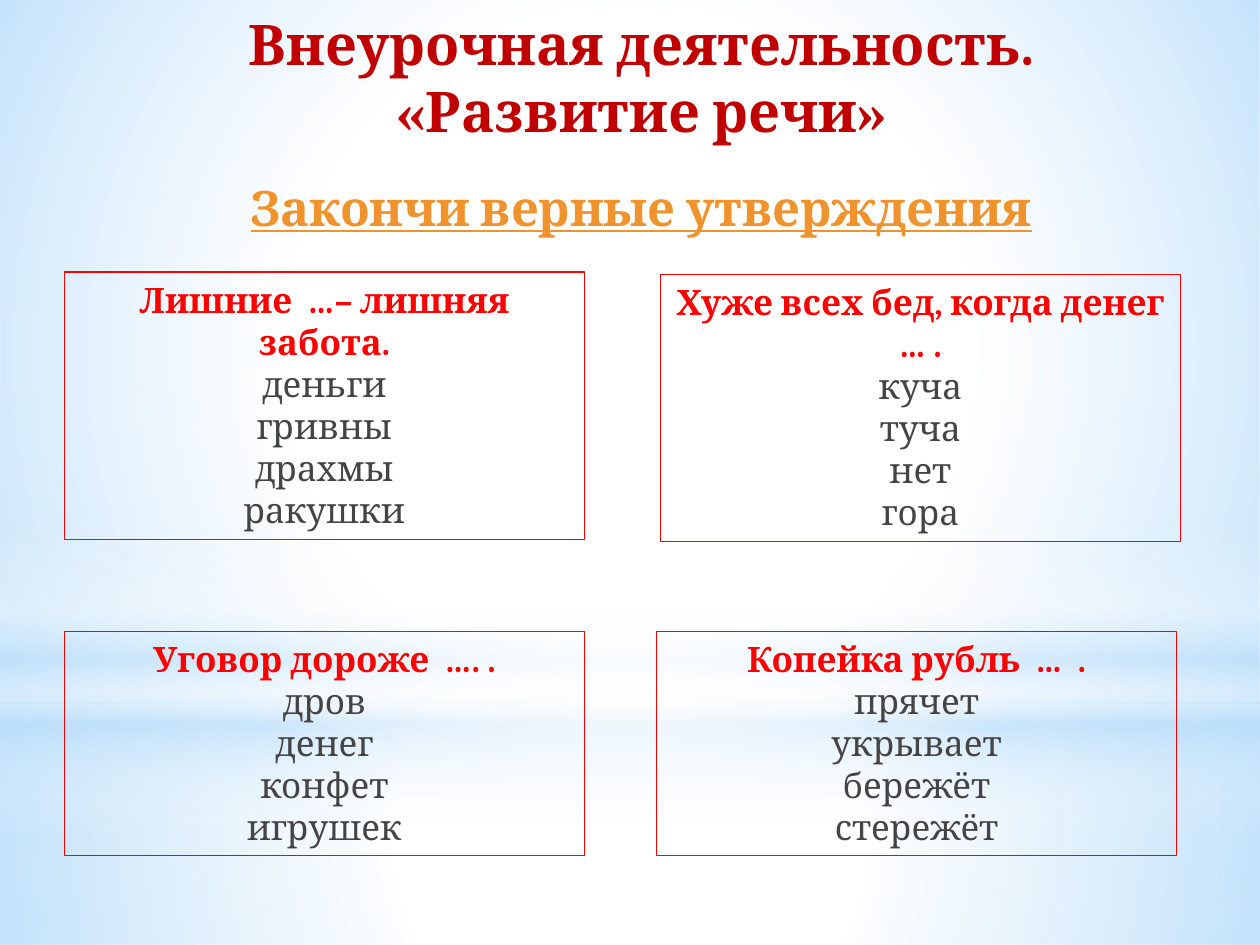
"""Build the speech-development slide with four proverb boxes."""
from lxml.etree import SubElement
from pptx import Presentation
from pptx.dml.color import RGBColor
from pptx.enum.shapes import MSO_SHAPE as Shape
from pptx.enum.text import MSO_ANCHOR as Anchor, MSO_AUTO_SIZE as AutoSize, PP_ALIGN as Align
from pptx.oxml.ns import qn
from pptx.util import Inches, Pt

WHITE = RGBColor(0xFF, 0xFF, 0xFF)
SKY = RGBColor(0xB4, 0xDC, 0xFA)
DARK_RED = RGBColor(0xC0, 0x00, 0x00)
ORANGE = RGBColor(0xF0, 0x93, 0x2C)
RED = RGBColor(0xFF, 0x00, 0x00)
GRAY = RGBColor(0x45, 0x44, 0x45)

presentation = Presentation()
presentation.slide_width = Inches(10)
presentation.slide_height = Inches(7.5)
slide = presentation.slides.add_slide(presentation.slide_layouts[6])
COLUMN = presentation.slide_width / 100
ROW = presentation.slide_height / 75


def place(left, top, width, height):
    return [round(left * COLUMN), round(top * ROW), round(width * COLUMN), round(height * ROW)]


def write_lines(frame, lines, styles):
    frame.word_wrap = True
    for index, (line, style) in enumerate(zip(lines, styles)):
        paragraph = frame.paragraphs[0] if index == 0 else frame.add_paragraph()
        paragraph.alignment = Align.CENTER
        font = paragraph.add_run().font
        paragraph.runs[0].text = line
        font.name = "Cambria"
        font.color.rgb = style["color"]
        for name in ("size", "bold", "underline"):
            setattr(font, name, style.get(name))


slide.background.fill.solid()
slide.background.fill.fore_color.rgb = WHITE

backdrop = [
    (Shape.RECTANGLE, (0, 55.8, 100, 19.2), True,
     [(0, WHITE, 91), (37, WHITE, 76), (100, SKY, 79)]),
    (Shape.RECTANGLE, (0, 0, 100, 55.8), True,
     [(0, WHITE, 89), (48, WHITE, 62), (100, SKY, 79)]),
    (Shape.RECTANGLE, (0, 41.2, 100, 25), False,
     [(0, WHITE, 0), (29, WHITE, 30), (45, SKY, 40),
      (55, WHITE, 26), (65, SKY, 60), (100, WHITE, 0)]),
    (Shape.OVAL, (0, 17.5, 100, 55.8), True,
     [(0, WHITE, 100), (56, WHITE, 0)]),
]
for kind, area, radial, stops in backdrop:
    shape = slide.shapes.add_shape(kind, *place(*area))
    shape.shadow.inherit = False
    shape.line.fill.background()
    shape.fill.gradient()
    gradient = shape.fill._xPr.find(qn("a:gradFill"))
    for child in list(gradient):
        gradient.remove(child)
    stop_list = SubElement(gradient, qn("a:gsLst"))
    for position, color, opacity in stops:
        stop = SubElement(stop_list, qn("a:gs"), pos=str(position * 1000))
        tint = SubElement(stop, qn("a:srgbClr"), val=str(color))
        SubElement(tint, qn("a:alpha"), val=str(opacity * 1000))
    if radial:
        circle = SubElement(gradient, qn("a:path"), path="circle")
        SubElement(circle, qn("a:fillToRect"), {side: "50000" for side in "ltrb"})
    else:
        SubElement(gradient, qn("a:lin"), ang="5400000", scaled="0")

headings = [
    (13.9, ["Закончи верные утверждения"],
     {"size": Pt(27.9), "bold": True, "underline": True, "color": ORANGE}),
    (3.6, ["Внеурочная деятельность.", "«Развитие речи»"],
     {"size": Pt(32), "bold": True, "color": DARK_RED}),
]
for top, lines, style in headings:
    heading = slide.shapes.add_textbox(*place(5.9, top, 90, 5))
    heading.text_frame.vertical_anchor = Anchor.MIDDLE
    write_lines(heading.text_frame, lines, [style] * len(lines))

proverbs = [
    (5.1, 21.6, 21.2, ["Лишние  …– лишняя забота.", "деньги", "гривны", "драхмы", "ракушки"]),
    (52.4, 21.8, 21.2, ["Хуже всех бед, когда денег … .", "куча", "туча", "нет", "гора"]),
    (5.1, 50.1, 17.8, ["Уговор дороже  …. .", "дров", "денег", "конфет", "игрушек"]),
    (52.1, 50.1, 17.8, ["Копейка рубль  …  .", "прячет", "укрывает", "бережёт", "стережёт"]),
]
question_style = {"size": Pt(20), "bold": True, "color": RED}
answer_style = {"size": Pt(20), "bold": False, "color": GRAY}
for left, top, height, lines in proverbs:
    box = slide.shapes.add_shape(Shape.RECTANGLE, *place(left, top, 41.3, height))
    box.shadow.inherit = False
    box.fill.background()
    box.line.color.rgb = RED
    box.line.width = Pt(0.75)
    box.text_frame.vertical_anchor = Anchor.TOP
    box.text_frame.auto_size = AutoSize.SHAPE_TO_FIT_TEXT
    write_lines(box.text_frame, lines, [question_style] + [answer_style] * 4)

presentation.save("out.pptx")
